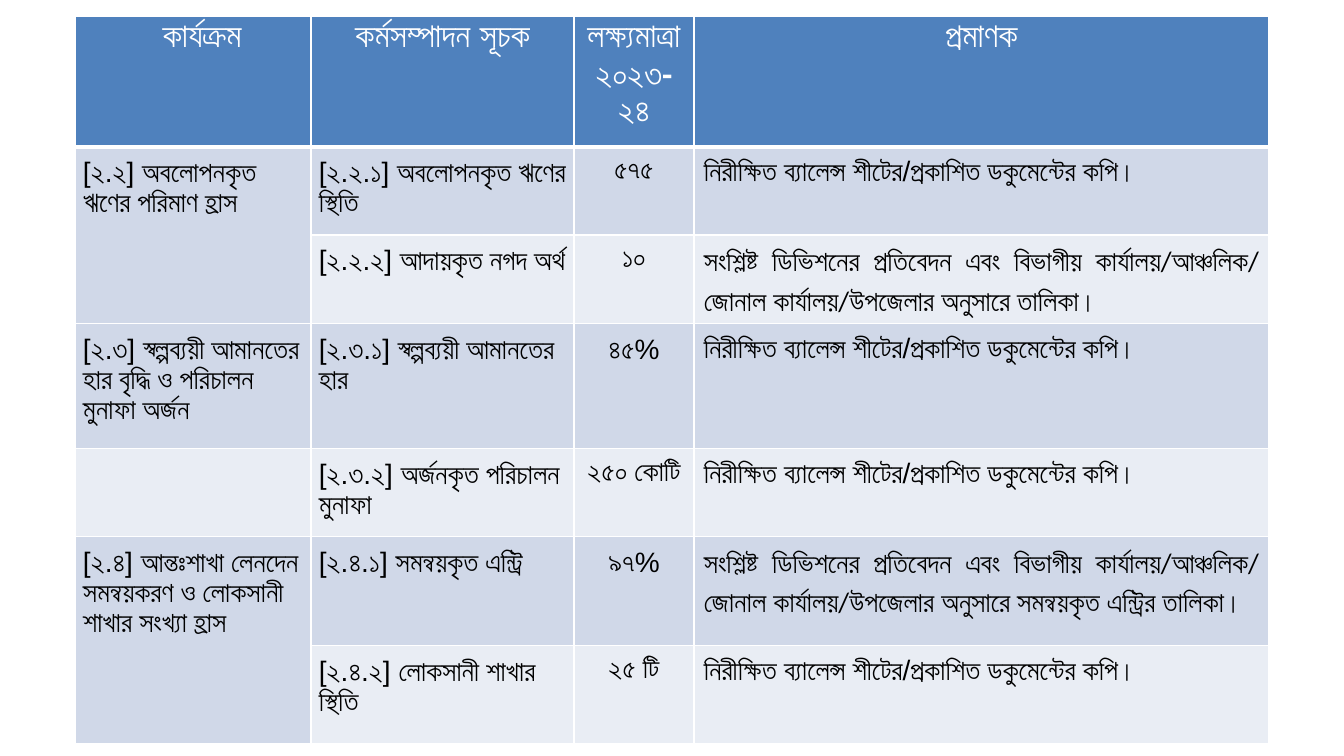
import dataclasses

import lxml.etree
import pptx
import pptx.dml.color
import pptx.enum.text
import pptx.oxml.ns
import pptx.table
import pptx.util

Color = pptx.dml.color.RGBColor
Align = pptx.enum.text.PP_ALIGN

WHITE = Color(0xFF, 0xFF, 0xFF)
BLACK = Color(0x00, 0x00, 0x00)
BLUE = Color(0x4F, 0x81, 0xBD)
DARK = Color(0xD0, 0xD8, 0xE8)
LIGHT = Color(0xE9, 0xED, 0xF4)

COLS = [236, 263, 120, 575]
ROWS = [131, 88, 88, 125, 88, 109, 98]
AUDIT = "নিরীক্ষিত ব্যালেন্স শীটের/প্রকাশিত ডকুমেন্টের কপি।"
OFFICE = ("সংশ্লিষ্ট ডিভিশনের প্রতিবেদন এবং বিভাগীয় "
          "কার্যালয়/আঞ্চলিক/ জোনাল কার্যালয়/উপজেলার অনুসারে ")


@dataclasses.dataclass(frozen=True)
class Style:
    size: int
    color: Color
    align: Align
    side: int
    edge: int
    bold: bool = False
    font: str = "Arial"
    space: float = 1.0
    after: int = 0


@dataclasses.dataclass(frozen=True)
class Goal:
    work: str
    index: str
    target: str
    proof: str
    font: str = "Arial"
    span: int = 1


HEAD = Style(24, WHITE, Align.CENTER, 10, 5, bold=True, font="Calibri")
LABEL = Style(20, BLACK, Align.LEFT, 8, 8, space=1.07, after=15)
VALUE = dataclasses.replace(LABEL, align=Align.CENTER)
PROOF = Style(20, BLACK, Align.JUSTIFY, 10, 5, space=1.15)

TITLES = ["কার্যক্রম", "কর্মসম্পাদন সূচক", "লক্ষ্যমাত্রা ২০২৩-২৪", "প্রমাণক"]
GOALS = [
    Goal("[২.২] অবলোপনকৃত ঋণের পরিমাণ হ্রাস", "[২.২.১] অবলোপনকৃত ঋণের স্থিতি",
         "৫৭৫", AUDIT, span=2),
    Goal("", "[২.২.২] আদায়কৃত নগদ অর্থ", "১০", OFFICE + "তালিকা।", "Calibri"),
    Goal("[২.৩] স্বল্পব্যয়ী আমানতের হার বৃদ্ধি ও পরিচালন মুনাফা অর্জন",
         "[২.৩.১] স্বল্পব্যয়ী আমানতের হার", "৪৫%", AUDIT),
    Goal("", "[২.৩.২] অর্জনকৃত পরিচালন মুনাফা", "২৫০ কোটি", AUDIT),
    Goal("[২.৪] আন্তঃশাখা লেনদেন সমন্বয়করণ ও লোকসানী শাখার সংখ্যা হ্রাস",
         "[২.৪.১] সমন্বয়কৃত এন্ট্রি", "৯৭%",
         OFFICE + "সমন্বয়কৃত এন্ট্রির তালিকা।", "Calibri", 2),
    Goal("", "[২.৪.২] লোকসানী শাখার স্থিতি", "২৫ টি", AUDIT),
]


def px(count: int) -> pptx.util.Emu:
    return pptx.util.Emu(round(count * 914400 / 100.8))


def frame(cell: pptx.table._Cell, row: int) -> None:
    props = cell._tc.get_or_add_tcPr()
    qn = pptx.oxml.ns.qn
    for side in "LRTB":
        thick = (row, side) in ((0, "B"), (1, "T"))
        width = pptx.util.Pt(3 if thick else 1)
        line = lxml.etree.SubElement(props, qn(f"a:ln{side}"), w=str(int(width)))
        fill = lxml.etree.SubElement(line, qn("a:solidFill"))
        lxml.etree.SubElement(fill, qn("a:srgbClr"), val=str(WHITE))


def paint(cell: pptx.table._Cell, row: int, color: Color) -> None:
    frame(cell, row)
    cell.fill.solid()
    cell.fill.fore_color.rgb = color


def write(cell: pptx.table._Cell, text: str, style: Style) -> None:
    cell.margin_left = cell.margin_right = px(style.side)
    cell.margin_top = cell.margin_bottom = px(style.edge)
    if not text:
        return
    cell.text_frame.text = text
    para = cell.text_frame.paragraphs[0]
    para.alignment = style.align
    para.line_spacing = style.space
    para.space_after = pptx.util.Pt(style.after)
    font = para.runs[0].font
    font.name = style.font
    font.size = pptx.util.Pt(style.size)
    font.bold = style.bold
    font.color.rgb = style.color


def main() -> None:
    deck = pptx.Presentation()
    deck.slide_width, deck.slide_height = px(1344), px(756)
    slide = deck.slides.add_slide(deck.slide_layouts[6])
    table = slide.shapes.add_table(
        len(ROWS), len(COLS), px(75), px(16), px(sum(COLS)), px(sum(ROWS))
    ).table
    table.horz_banding = False
    for col, width in zip(table.columns, COLS):
        col.width = px(width)
    for row, height in zip(table.rows, ROWS):
        row.height = px(height)

    for col, title in enumerate(TITLES):
        paint(table.cell(0, col), 0, BLUE)
        write(table.cell(0, col), title, HEAD)
    table.cell(0, 0).margin_left = px(28)

    for row, goal in enumerate(GOALS, 1):
        proof = dataclasses.replace(PROOF, font=goal.font)
        texts = [goal.work, goal.index, goal.target, goal.proof]
        styles = [LABEL, LABEL, VALUE, proof]
        for col, (text, style) in enumerate(zip(texts, styles)):
            cell = table.cell(row, col)
            paint(cell, row, DARK if row % 2 else LIGHT)
            write(cell, text, style)
        if goal.span > 1:
            table.cell(row, 0).merge(table.cell(row + goal.span - 1, 0))

    deck.save("out.pptx")


if __name__ == "__main__":
    main()
